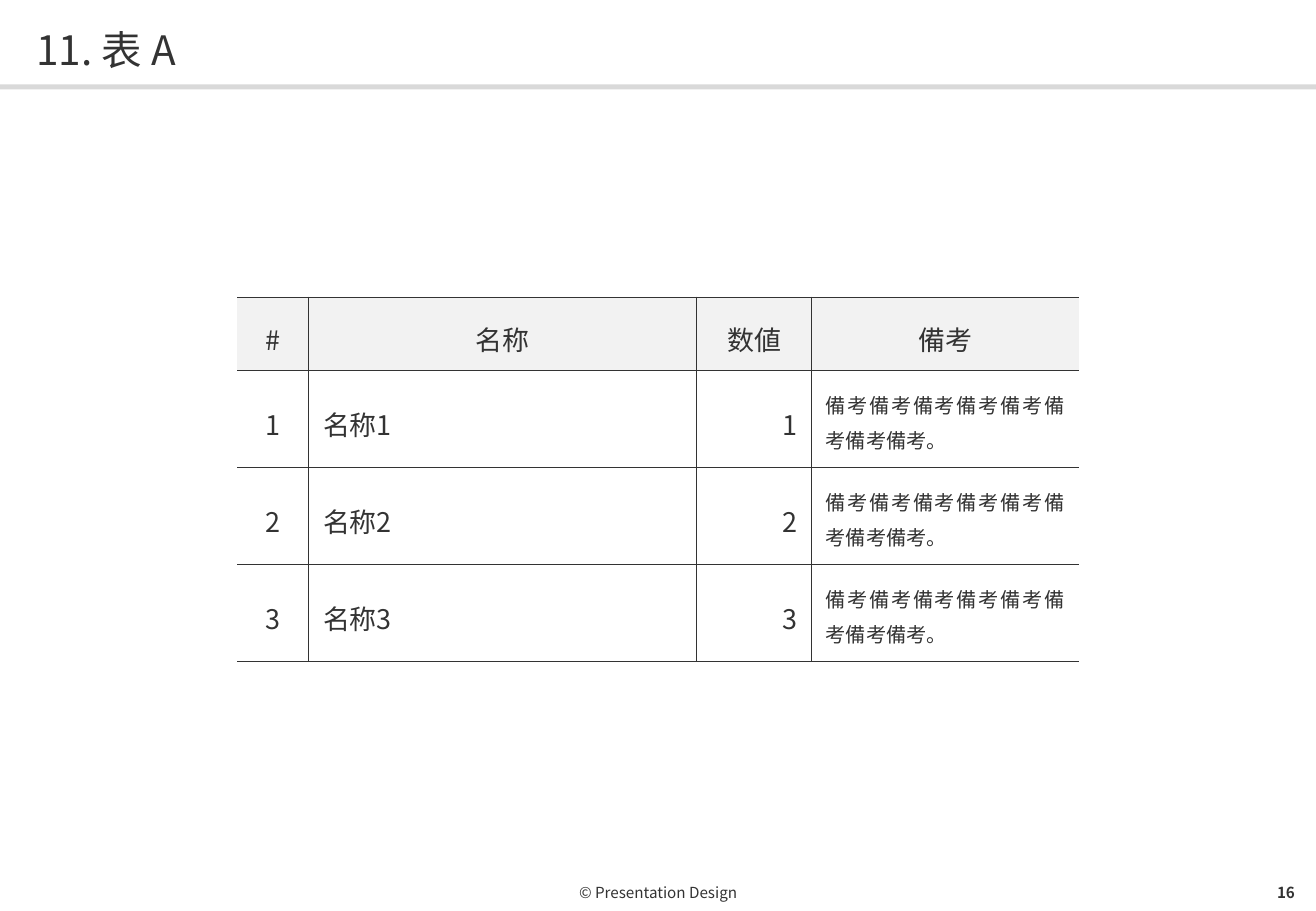
from lxml.etree import SubElement as add_node
from pptx import Presentation
from pptx.dml.color import RGBColor as Rgb
from pptx.enum.shapes import MSO_SHAPE as Shape
from pptx.enum.text import MSO_ANCHOR as Anchor, PP_ALIGN as Align
from pptx.oxml import parse_xml
from pptx.oxml.ns import nsdecls, qn
from pptx.util import Pt

FONT = "Noto Sans CJK JP"
COLORS = {"ink": "333333", "rule": "D9D9D9", "head": "F2F2F2"}
PLAIN = "{2D5ABB26-0587-4C30-8999-92F81FD0307C}"
WIDE, HIGH = 780, 540

NOTE = "備考" * 8 + "。"
HEADS = ["#", "名称", "数値", "備考"]
ROWS = [[str(n), f"名称{n}", str(n), NOTE] for n in range(1, 4)]
COLS = [42.5, 230, 68, 158.5]
ALIGNS = [Align.CENTER, Align.JUSTIFY, Align.RIGHT, Align.JUSTIFY]
SIZES = [16, 16, 16, 12]
HEAD_HIGH, ROW_HIGH = 43.3, 57.5


def color(key):
    return Rgb.from_string(COLORS[key])


def write(frame, text, size, align, bold=False):
    """Put one run in the frame and return its paragraph."""
    para = frame.paragraphs[0]
    para.alignment = align
    run = para.add_run()
    run.text = text
    font = run.font
    font.name, font.size, font.bold = FONT, Pt(size), bold
    font.color.rgb = color("ink")
    add_node(font._element, qn("a:ea"), typeface=FONT)
    return para


def strip(frame):
    """Centre the text vertically, with no insets."""
    frame.word_wrap = True
    frame.vertical_anchor = Anchor.MIDDLE
    frame.margin_left = frame.margin_right = 0
    frame.margin_top = frame.margin_bottom = 0


def add_title(slide, text, left, top, width, height):
    title = slide.shapes.title
    title.left, title.top = Pt(left), Pt(top)
    title.width, title.height = Pt(width), Pt(height)
    strip(title.text_frame)
    write(title.text_frame, text, 24, Align.LEFT).line_spacing = 1.1


def add_rule(slide, left, top, width, height):
    bar = slide.shapes.add_shape(
        Shape.RECTANGLE, Pt(left), Pt(top), Pt(width), Pt(height))
    bar.shadow.inherit = False
    bar.fill.solid()
    bar.fill.fore_color.rgb = color("rule")
    bar.line.fill.background()


def add_label(slide, text, align, bold, left, top, width, height):
    box = slide.shapes.add_textbox(Pt(left), Pt(top), Pt(width), Pt(height))
    strip(box.text_frame)
    write(box.text_frame, text, 9, align, bold)


def add_foot(slide, left, top, width, height):
    """Centre the credit in the box and set the page number at its right."""
    add_label(slide, "© Presentation Design", Align.CENTER, False,
              left + 64, top, width - 128, height)
    add_label(slide, "16", Align.RIGHT, True,
              left + width - 50, top, 37.5, height)


def draw_edges(cell, sides):
    props = cell._tc.get_or_add_tcPr()
    for spot, side in enumerate(sides):
        props.insert(spot, parse_xml(
            f'<a:ln{side} {nsdecls("a")} w="{Pt(0.5)}"><a:solidFill>'
            f'<a:srgbClr val="{COLORS["ink"]}"/></a:solidFill></a:ln{side}>'))


def fill_cell(cell, text, size, align, head, sides):
    cell.margin_left = cell.margin_right = cell.margin_top = Pt(8.5)
    cell.margin_bottom = Pt(7)
    small = size < 16 and not head
    cell.vertical_anchor = Anchor.TOP if small else Anchor.MIDDLE
    if head:
        cell.fill.solid()
        cell.fill.fore_color.rgb = color("head")
    else:
        cell.fill.background()
    para = write(cell.text_frame, text, size, align)
    para.line_spacing, para.space_after = 1.2, Pt(3)
    draw_edges(cell, sides)


def add_grid(slide, left, top):
    """Ruled table, open at its left and right sides."""
    highs = [HEAD_HIGH] + [ROW_HIGH] * len(ROWS)
    table = slide.shapes.add_table(
        len(highs), len(COLS), Pt(left), Pt(top),
        Pt(sum(COLS)), Pt(sum(highs))).table
    table.horz_banding = False
    table._tbl.tblPr.find(qn("a:tableStyleId")).text = PLAIN
    for col, width in zip(table.columns, COLS):
        col.width = Pt(width)
    for r, (texts, high) in enumerate(zip([HEADS] + ROWS, highs)):
        table.rows[r].height = Pt(high)
        for c, text in enumerate(texts):
            head = r == 0
            sides = "L" * (c > 0) + "R" * (c < len(COLS) - 1) + "TB"
            fill_cell(table.cell(r, c), text, 16 if head else SIZES[c],
                      Align.CENTER if head else ALIGNS[c], head, sides)


def main():
    deck = Presentation()
    deck.slide_width, deck.slide_height = Pt(WIDE), Pt(HIGH)
    slide = deck.slides.add_slide(deck.slide_layouts[5])
    add_rule(slide, 0, 50, WIDE, 3)
    add_title(slide, "11. 表 A", 21.5, 12.5, 737, 31)
    add_grid(slide, (WIDE - sum(COLS)) / 2, 176)
    add_foot(slide, 0, 519, WIDE, 20.5)
    deck.save("out.pptx")


if __name__ == "__main__":
    main()
